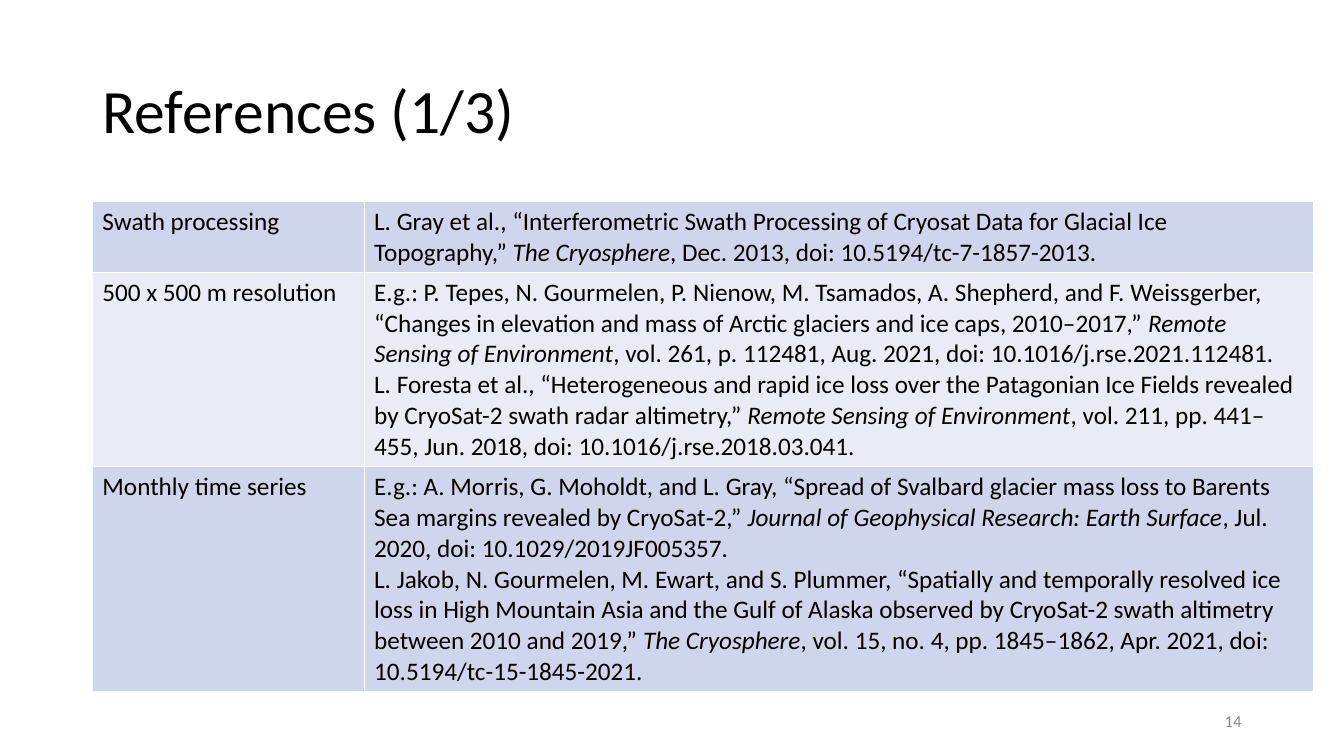
from lxml import etree
from pptx import Presentation
from pptx.dml.color import RGBColor
from pptx.enum.text import MSO_ANCHOR, PP_ALIGN
from pptx.oxml.ns import qn
from pptx.util import Pt

LEFT, RIGHT = PP_ALIGN.LEFT, PP_ALIGN.RIGHT
MIDDLE = MSO_ANCHOR.MIDDLE
FONT = "Calibri"
COLORS = {"text": "000000", "number": "8C8C8C", "border": "FFFFFF",
          "band_dark": "CFD5EA", "band_light": "E9EBF5"}

TITLE = "References (1/3)"
PAGE_NUMBER = "14"
# Each reference: authors and article, journal (italic), publication details
REFERENCES = [
    ("Swath processing", [
        ("L. Gray et al., “Interferometric Swath Processing of Cryosat Data for Glacial Ice Topography,” ",
         "The Cryosphere",
         ", Dec. 2013, doi: 10.5194/tc-7-1857-2013."),
    ]),
    ("500 x 500 m resolution", [
        ("E.g.: P. Tepes, N. Gourmelen, P. Nienow, M. Tsamados, A. Shepherd, and F. Weissgerber, "
         "“Changes in elevation and mass of Arctic glaciers and ice caps, 2010–2017,” ",
         "Remote Sensing of Environment",
         ", vol. 261, p. 112481, Aug. 2021, doi: 10.1016/j.rse.2021.112481."),
        ("L. Foresta et al., “Heterogeneous and rapid ice loss over the Patagonian Ice Fields "
         "revealed by CryoSat-2 swath radar altimetry,” ",
         "Remote Sensing of Environment",
         ", vol. 211, pp. 441–455, Jun. 2018, doi: 10.1016/j.rse.2018.03.041."),
    ]),
    ("Monthly time series", [
        ("E.g.: A. Morris, G. Moholdt, and L. Gray, “Spread of Svalbard glacier mass loss "
         "to Barents Sea margins revealed by CryoSat‐2,” ",
         "Journal of Geophysical Research: Earth Surface",
         ", Jul. 2020, doi: 10.1029/2019JF005357."),
        ("L. Jakob, N. Gourmelen, M. Ewart, and S. Plummer, “Spatially and temporally resolved "
         "ice loss in High Mountain Asia and the Gulf of Alaska observed by CryoSat-2 swath "
         "altimetry between 2010 and 2019,” ",
         "The Cryosphere",
         ", vol. 15, no. 4, pp. 1845–1862, Apr. 2021, doi: 10.5194/tc-15-1845-2021."),
    ]),
]

PAGE_SIZE = (960, 540)
TITLE_BOX = (66, 28.8, 828, 104.4)
NUMBER_BOX = (678, 500.5, 216, 28.8)
TABLE_LEFT, TABLE_TOP = 66, 144
COLUMN_WIDTHS = (194.1, 678.1)
ROW_HEIGHTS = (50.4, 139, 160.5)


def add_span(para, text, size, color="text", italic=False):
    span = para.add_run()
    span.text = text
    span.font.color.rgb = RGBColor.from_string(COLORS[color])
    for name, value in {"name": FONT, "size": Pt(size), "italic": italic}.items():
        setattr(span.font, name, value)


def add_label(page, place, text, size, color, align, spacing):
    box = page.shapes.add_textbox(*map(Pt, place))
    frame = box.text_frame
    frame.word_wrap = True
    frame.vertical_anchor = MIDDLE
    para = frame.paragraphs[0]
    para.alignment = align
    para.line_spacing = spacing
    add_span(para, text, size, color)


def style_cell(cell, band):
    """Fill the cell and give it thin borders on all four sides."""
    cell.fill.solid()
    cell.fill.fore_color.rgb = RGBColor.from_string(COLORS[band])
    properties = cell._tc.get_or_add_tcPr()
    for index, side in enumerate(("lnL", "lnR", "lnT", "lnB")):
        line = etree.Element(qn(f"a:{side}"), w=str(Pt(1)))
        fill = etree.SubElement(line, qn("a:solidFill"))
        etree.SubElement(fill, qn("a:srgbClr"), val=COLORS["border"])
        properties.insert(index, line)


def add_reference_table(page):
    frame = page.shapes.add_table(
        len(REFERENCES), len(COLUMN_WIDTHS), Pt(TABLE_LEFT), Pt(TABLE_TOP),
        Pt(sum(COLUMN_WIDTHS)), Pt(sum(ROW_HEIGHTS)))
    table = frame.table
    table.first_row = False
    for column, width in zip(table.columns, COLUMN_WIDTHS):
        column.width = Pt(width)
    for row, height in zip(table.rows, ROW_HEIGHTS):
        row.height = Pt(height)

    for index, (topic, references) in enumerate(REFERENCES):
        topic_cell, reference_cell = table.rows[index].cells
        for cell in (topic_cell, reference_cell):
            style_cell(cell, "band_light" if index % 2 else "band_dark")
        add_span(topic_cell.text_frame.paragraphs[0], topic, 18)
        frame = reference_cell.text_frame
        for number, (article, journal, details) in enumerate(references):
            para = frame.add_paragraph() if number else frame.paragraphs[0]
            add_span(para, article, 18)
            add_span(para, journal, 18, italic=True)
            add_span(para, details, 18)


def main():
    deck = Presentation()
    deck.slide_width, deck.slide_height = map(Pt, PAGE_SIZE)
    page = deck.slides.add_slide(deck.slide_layouts[6])
    add_label(page, TITLE_BOX, TITLE, 44, "text", LEFT, 0.9)
    add_reference_table(page)
    add_label(page, NUMBER_BOX, PAGE_NUMBER, 12, "number", RIGHT, 1.0)
    deck.save("out.pptx")


if __name__ == "__main__":
    main()
